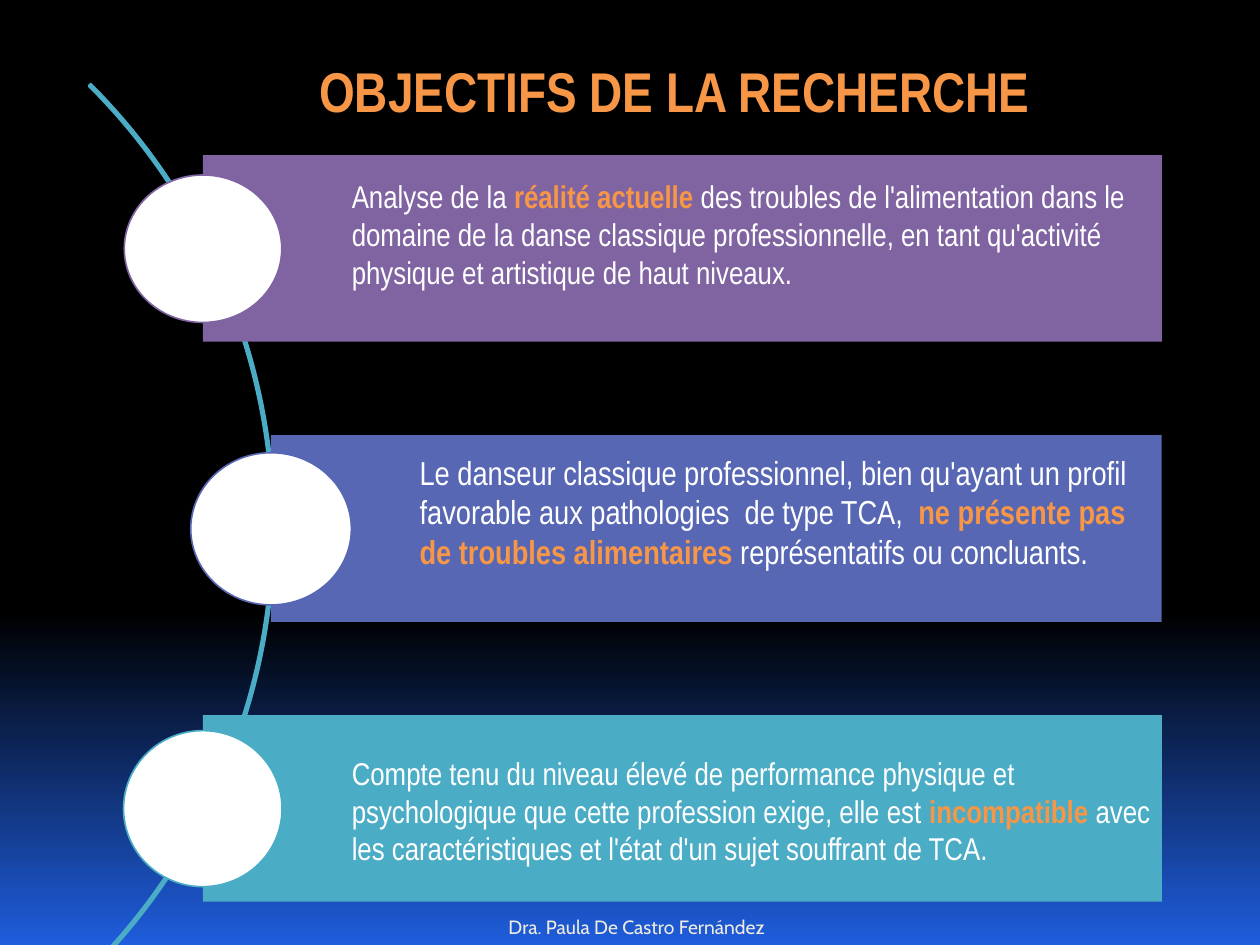
import pptx
import pptx.dml.color
import pptx.enum.shapes
import pptx.enum.text
import pptx.util

Pt = pptx.util.Pt
RGBColor = pptx.dml.color.RGBColor
Shape = pptx.enum.shapes.MSO_SHAPE
Anchor = pptx.enum.text.MSO_ANCHOR
Align = pptx.enum.text.PP_ALIGN

BLACK = RGBColor(0x00, 0x00, 0x00)
BLUE = RGBColor(0x1F, 0x5D, 0xDC)
WHITE = RGBColor(0xFF, 0xFF, 0xFF)
CREAM = RGBColor(0xEE, 0xEC, 0xE1)
ORANGE = RGBColor(0xF7, 0x96, 0x46)
PURPLE = RGBColor(0x80, 0x64, 0xA2)
INDIGO = RGBColor(0x57, 0x67, 0xB4)
TEAL = RGBColor(0x4B, 0xAC, 0xC6)

PANEL_RIGHT, PANEL_HEIGHT = 663.9, 106.6
PANEL_TOP, PANEL_STEP = 88.7, 160

# left, colour, font size, top inset, circle (left, top, width, height), text runs
OBJECTIVES = [
    (116, PURPLE, 18, 12.5, (71, 100, 90, 84.3), [
        ("Analyse de la ", False),
        ("réalité actuelle ", True),
        ("des troubles de l'alimentation dans le domaine de la danse classique "
         "professionnelle, en tant qu'activité physique et artistique de haut niveaux.", False)]),
    (154.8, INDIGO, 19, 9.5, (109, 258.7, 91.8, 87), [
        ("Le danseur classique professionnel, bien qu'ayant un profil favorable "
         "aux pathologies  de type TCA,  ", False),
        ("ne présente pas de troubles alimentaires ", True),
        ("représentatifs ou concluants.", False)]),
    (116, TEAL, 18, 22, (70.6, 417.5, 90.6, 89.2), [
        ("Compte tenu du niveau élevé de performance physique et psychologique "
         "que cette profession exige, elle est ", False),
        ("incompatible ", True),
        ("avec les caractéristiques et l'état d'un sujet souffrant de TCA.", False)]),
]


class SlideBuilder:
    font_name = "Arial Narrow"

    def __init__(self, slide):
        self.slide = slide

    def background(self, start, end, start_position):
        fill = self.slide.background.fill
        fill.gradient()
        fill.gradient_angle = 270
        for stop, color, position in zip(fill.gradient_stops, (start, end), (start_position, 1)):
            stop.color.rgb = color
            stop.position = position

    def shape(self, kind, box, fill=None, line=None, line_width=0.94):
        shape = self.slide.shapes.add_shape(kind, *map(Pt, box))
        shape.shadow.inherit = False
        if fill is None:
            shape.fill.background()
        else:
            shape.fill.solid()
            shape.fill.fore_color.rgb = fill
        if line is None:
            shape.line.fill.background()
        else:
            shape.line.color.rgb = line
            shape.line.width = Pt(line_width)
        return shape

    def add_text(self, shape, runs, frame_format, alignment, **font_format):
        """Fill a shape with one paragraph of (text, colour, bold) runs."""
        frame = shape.text_frame
        for name, value in {"word_wrap": True, **frame_format}.items():
            setattr(frame, name, value)
        paragraph = frame.paragraphs[0]
        paragraph.alignment = alignment
        for text, color, bold in runs:
            run = paragraph.add_run()
            run.text = text
            for name, value in {"name": self.font_name, "bold": bold, **font_format}.items():
                setattr(run.font, name, value)
            run.font.color.rgb = color

    def label(self, box, text, color, anchor, bold=False, **font_format):
        text_box = self.slide.shapes.add_textbox(*map(Pt, box))
        self.add_text(text_box, [(text, color, bold)], {"vertical_anchor": anchor},
                      Align.CENTER, **font_format)

    def arc(self, box, color):
        arc = self.shape(Shape.BLOCK_ARC, box, line=color, line_width=1.5)
        for index, value in enumerate((189, 27, 0.002)):
            arc.adjustments[index] = value

    def objective(self, top, left, color, size, top_inset, circle, parts):
        panel = self.shape(Shape.RECTANGLE, (left, top, PANEL_RIGHT - left, PANEL_HEIGHT), color)
        runs = [(text, ORANGE if strong else WHITE, strong) for text, strong in parts]
        frame_format = {"vertical_anchor": Anchor.TOP, "margin_left": Pt(85),
                        "margin_top": Pt(top_inset), "margin_right": Pt(3.3),
                        "margin_bottom": Pt(3.3)}
        self.add_text(panel, runs, frame_format, Align.LEFT, size=Pt(size))
        self.shape(Shape.OVAL, circle, WHITE, color)


def main():
    presentation = pptx.Presentation()
    presentation.slide_width, presentation.slide_height = Pt(720), Pt(540)
    builder = SlideBuilder(presentation.slides.add_slide(presentation.slide_layouts[6]))
    builder.background(BLACK, BLUE, 0.65)
    builder.arc((-560.2, -56.9, 717.1, 717.1), TEAL)
    for index, objective in enumerate(OBJECTIVES):
        builder.objective(PANEL_TOP + index * PANEL_STEP, *objective)
    builder.label((144.7, 28.8, 481.7, 46.1), "OBJECTIFS DE LA RECHERCHE", ORANGE,
                  Anchor.TOP, bold=True, size=Pt(32))
    builder.label((146.2, 511.2, 437.8, 28.8), "Dra. Paula De Castro Fernández ", CREAM,
                  Anchor.BOTTOM, name="Cabin", size=Pt(11))
    presentation.save("out.pptx")


if __name__ == "__main__":
    main()
